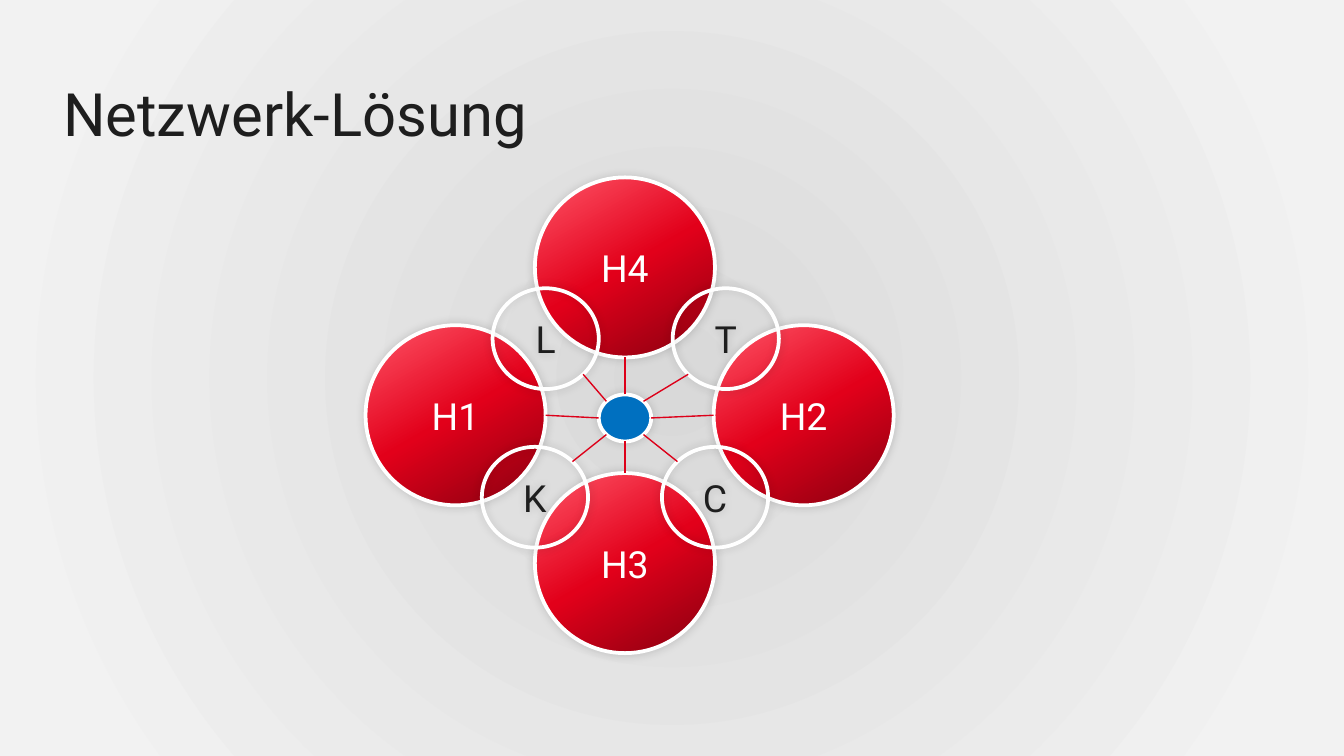
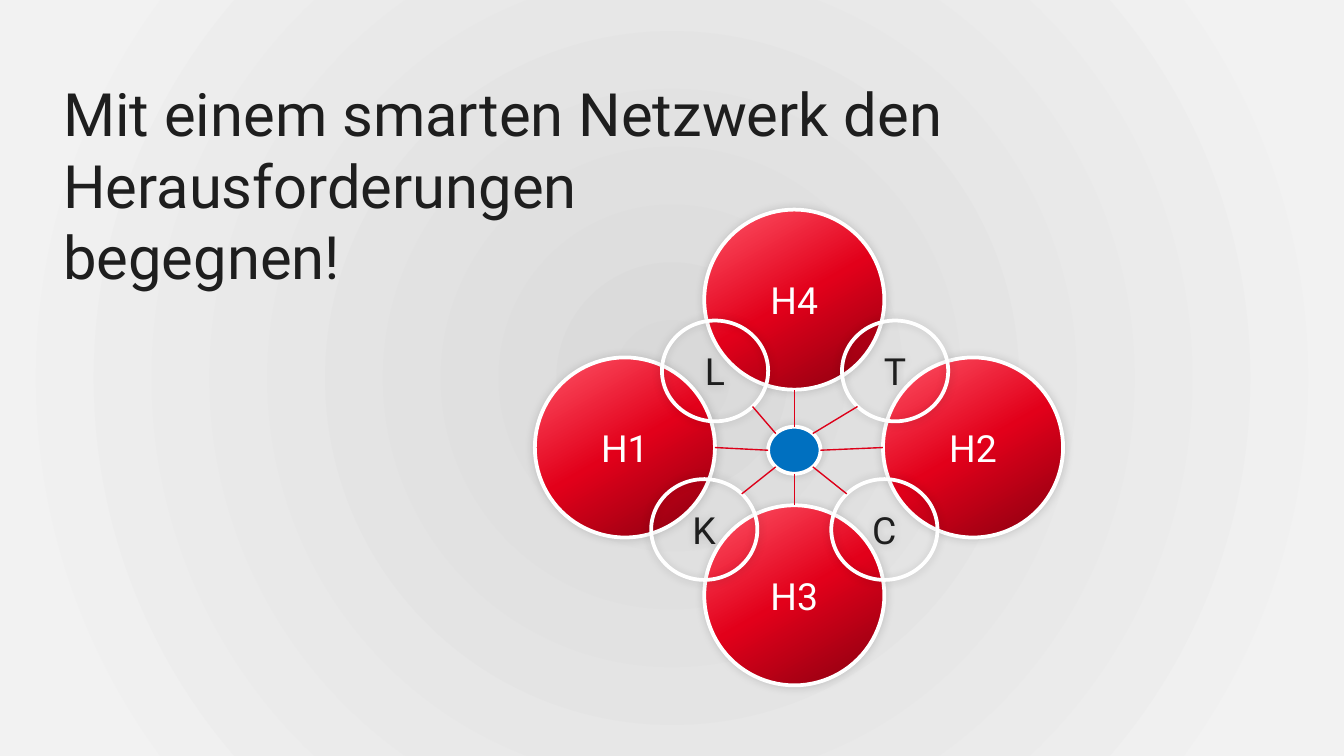
from dataclasses import dataclass
from math import cos, radians, sin
from typing import NamedTuple, Optional

from pptx import Presentation
from pptx.dml.color import RGBColor
from pptx.enum.shapes import MSO_CONNECTOR as Connector, MSO_SHAPE as Preset
from pptx.enum.text import MSO_ANCHOR as Anchor, MSO_AUTO_SIZE as AutoSize, PP_ALIGN as Align
from pptx.oxml import parse_xml
from pptx.oxml.ns import nsdecls
from pptx.util import Inches, Pt

FONT = "Roboto"
INK, WHITE, HUB_BLUE, SPOKE_RED = "1E1E1E", "FFFFFF", "0070C0", "DD0019"
RED_STOPS = ((0, "FF5568"), (50, "E2001A"), (100, "870010"))
GRAY_STOPS = ((0, "D9D9D9"), (90, "F2F2F2"))
RED_SHADE = '<a:lin ang="3600000" scaled="0"/>'
CENTRE_GLOW = ('<a:path path="circle">'
               '<a:fillToRect l="50000" t="50000" r="50000" b="50000"/></a:path>')
SOFT_SHADOW = ('<a:outerShdw {} blurRad="63500" dist="0" dir="0">'
               '<a:srgbClr val="000000"><a:alpha val="15000"/></a:srgbClr></a:outerShdw>')


class Point(NamedTuple):
    """A position or an offset in inches."""
    x: float
    y: float


@dataclass(frozen=True)
class CircleStyle:
    """Size and colours of one kind of circle; no stops and no fill means hollow."""
    width: float
    height: float
    text_color: str = INK
    stops: tuple = ()
    fill: Optional[str] = None


@dataclass(frozen=True)
class Satellite:
    """A circle around the hub and the clockwise angle at which its spoke leaves the hub."""
    label: str
    style: CircleStyle
    offset: Point
    angle: int


@dataclass(frozen=True)
class NetworkSlide:
    """The title of a slide and the centre of its network."""
    title: str
    hub: Point


LARGE = CircleStyle(1.34, 1.34, WHITE, stops=RED_STOPS)
SMALL = CircleStyle(0.79, 0.75)
HUB = CircleStyle(0.39, 0.35, fill=HUB_BLUE)

SATELLITES = (
    Satellite("H1", LARGE, Point(-1.26, -0.02), 180),
    Satellite("H2", LARGE, Point(1.33, -0.02), 0),
    Satellite("H3", LARGE, Point(0, 1.08), 90),
    Satellite("H4", LARGE, Point(0, -1.12), 270),
    Satellite("L", SMALL, Point(-0.59, -0.59), 225),
    Satellite("T", SMALL, Point(0.75, -0.59), 315),
    Satellite("C", SMALL, Point(0.67, 0.59), 45),
    Satellite("K", SMALL, Point(-0.67, 0.59), 135),
)

SLIDES = (
    NetworkSlide("Netzwerk-Lösung", Point(4.65, 3.11)),
    NetworkSlide("Mit einem smarten Netzwerk den Herausforderungen \vbegegnen!",
                 Point(5.91, 3.35)),
)


def color(value: str) -> RGBColor:
    """Turn a hex string into a colour."""
    return RGBColor.from_string(value)


def set_gradient(owner, fill, stops: tuple, direction: str) -> None:
    """Give the fill of a slide or shape a gradient with these stops."""
    fill.gradient()
    gradient = owner.element.xpath(".//a:gradFill")[0]
    stop_list = "".join(f'<a:gs pos="{position * 1000}"><a:srgbClr val="{value}"/></a:gs>'
                        for position, value in stops)
    gradient.getparent().replace(gradient, parse_xml(
        f'<a:gradFill {nsdecls("a")} rotWithShape="1">'
        f'<a:gsLst>{stop_list}</a:gsLst>{direction}</a:gradFill>'))


def format_text(text_frame, size: int, text_color: str, alignment) -> None:
    """Format every run of a text frame alike."""
    for paragraph in text_frame.paragraphs:
        paragraph.alignment = alignment
        for run in paragraph.runs:
            run.font.name = FONT
            run.font.size = Pt(size)
            run.font.color.rgb = color(text_color)


def set_title(slide, text: str) -> None:
    """Place and fill the title placeholder."""
    title = slide.shapes.title
    title.left, title.top = Inches(0.43), Inches(0.53)
    title.width, title.height = Inches(9.29), Inches(0.48)
    frame = title.text_frame
    frame.text = text
    frame.word_wrap = True
    frame.auto_size = AutoSize.NONE
    frame.vertical_anchor = Anchor.TOP
    frame.margin_left = frame.margin_right = Inches(0.04)
    frame.margin_top = frame.margin_bottom = Inches(0.04)
    format_text(frame, 32, INK, Align.LEFT)


def add_circle(slide, centre: Point, style: CircleStyle, label: str = "") -> None:
    """Draw a white-rimmed circle with a soft shadow around its centre."""
    shape = slide.shapes.add_shape(
        Preset.OVAL, Inches(centre.x - style.width / 2), Inches(centre.y - style.height / 2),
        Inches(style.width), Inches(style.height))
    if style.stops:
        set_gradient(shape, shape.fill, style.stops, RED_SHADE)
    elif style.fill:
        shape.fill.solid()
        shape.fill.fore_color.rgb = color(style.fill)
    else:
        shape.fill.background()
    shape.line.color.rgb = color(WHITE)
    shape.line.width = Pt(2)
    shape.shadow.inherit = False
    effects = shape.element.xpath("./p:spPr/a:effectLst")[0]
    effects.append(parse_xml(SOFT_SHADOW.format(nsdecls("a"))))
    if label:
        shape.text_frame.text = label
        shape.text_frame.vertical_anchor = Anchor.MIDDLE
        format_text(shape.text_frame, 20, style.text_color, Align.CENTER)


def rim_point(centre: Point, style: CircleStyle, angle: int) -> Point:
    """Find the point on a circle's rim at a clockwise angle in degrees."""
    return Point(centre.x + style.width / 2 * cos(radians(angle)),
                 centre.y + style.height / 2 * sin(radians(angle)))


def add_spoke(slide, start: Point, end: Point) -> None:
    """Draw a thin red line between two points."""
    spoke = slide.shapes.add_connector(
        Connector.STRAIGHT, Inches(start.x), Inches(start.y), Inches(end.x), Inches(end.y))
    spoke.line.color.rgb = color(SPOKE_RED)
    spoke.line.width = Pt(0.75)
    spoke.element.spPr.append(parse_xml(f'<a:effectLst {nsdecls("a")}/>'))


def add_network(slide, hub: Point) -> None:
    """Draw the satellites, the hub and the spokes between them."""
    placed = [(satellite, Point(hub.x + satellite.offset.x, hub.y + satellite.offset.y))
              for satellite in SATELLITES]
    for satellite, centre in placed:
        add_circle(slide, centre, satellite.style, satellite.label)
    add_circle(slide, hub, HUB)
    for satellite, centre in placed:
        add_spoke(slide, rim_point(hub, HUB, satellite.angle),
                  rim_point(centre, satellite.style, satellite.angle + 180))


def main() -> None:
    """Build and save the presentation."""
    presentation = Presentation()
    presentation.slide_width = Inches(10)
    presentation.slide_height = Inches(10 * 9 / 16)
    master = presentation.slide_master
    set_gradient(master, master.background.fill, GRAY_STOPS, CENTRE_GLOW)
    title_only = presentation.slide_layouts[5]
    for network in SLIDES:
        slide = presentation.slides.add_slide(title_only)
        set_title(slide, network.title)
        add_network(slide, network.hub)
    presentation.save("out.pptx")


if __name__ == "__main__":
    main()
